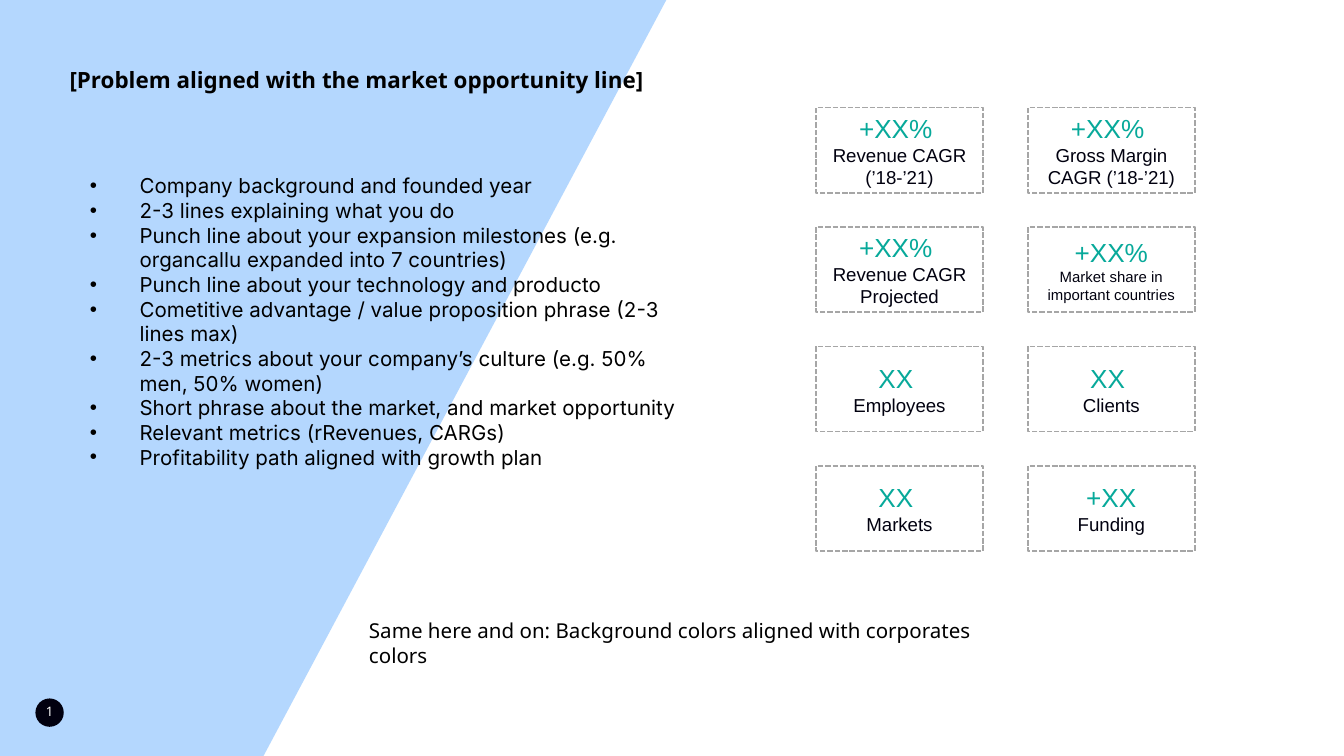
import pptx
import pptx.dml.color
import pptx.enum.dml
import pptx.enum.shapes
import pptx.enum.text
import pptx.oxml.ns
import pptx.util
from lxml import etree

Pt = pptx.util.Pt
ALIGN = pptx.enum.text.PP_ALIGN
ANCHOR = pptx.enum.text.MSO_ANCHOR
SHAPE = pptx.enum.shapes.MSO_SHAPE

COLORS = {
    "sky": "B4D7FE",
    "ink": "01000F",
    "black": "000000",
    "white": "FFFFFF",
    "teal": "07A99A",
    "dash": "A6A6A6",
}


class SlideBuilder:
    def __init__(self, slide):
        self.slide = slide

    def color(self, name):
        return pptx.dml.color.RGBColor.from_string(COLORS[name])

    def paint(self, shape, fill):
        shape.shadow.inherit = False
        shape.fill.solid()
        shape.fill.fore_color.rgb = self.color(fill)
        shape.line.fill.background()

    def add_words(self, paragraph, text, size, font, color, bold=False):
        run = paragraph.add_run()
        run.text = text
        run.font.size = Pt(size)
        run.font.name = font
        run.font.bold = bold
        run.font.color.rgb = self.color(color)

    def outline(self, points, fill):
        corners = [(Pt(x), Pt(y)) for x, y in points]
        pen = self.slide.shapes.build_freeform(*corners[0])
        pen.add_line_segments(corners[1:], close=True)
        self.paint(pen.convert_to_shape(), fill)

    def shape(self, kind, x, y, w, h, fill):
        shape = self.slide.shapes.add_shape(kind, Pt(x), Pt(y), Pt(w), Pt(h))
        self.paint(shape, fill)
        return shape

    def text(self, x, y, w, h, lines, size, font, color="black", bold=False,
             pad=3.6, anchor=ANCHOR.TOP, align=ALIGN.LEFT, bullets=False):
        frame = self.slide.shapes.add_textbox(Pt(x), Pt(y), Pt(w), Pt(h)).text_frame
        frame.word_wrap = True
        frame.vertical_anchor = anchor
        frame.margin_top = frame.margin_bottom = Pt(pad)
        for i, line in enumerate(lines):
            paragraph = frame.add_paragraph() if i else frame.paragraphs[0]
            paragraph.alignment = align
            if bullets:
                self.bullet(paragraph)
            self.add_words(paragraph, line, size, font, color, bold)
        return frame

    def bullet(self, paragraph):
        properties = paragraph._p.get_or_add_pPr()
        properties.set("marL", str(Pt(36)))
        properties.set("indent", str(-Pt(26.6)))
        qn = pptx.oxml.ns.qn
        tint = etree.SubElement(properties, qn("a:buClr"))
        etree.SubElement(tint, qn("a:srgbClr")).set("val", COLORS["black"])
        etree.SubElement(properties, qn("a:buFont")).set("typeface", "Arial")
        etree.SubElement(properties, qn("a:buChar")).set("char", "•")

    def metric(self, x, y, w, h, value, label, label_size):
        card = self.shape(SHAPE.RECTANGLE, x, y, w, h, "white")
        card.line.color.rgb = self.color("dash")
        card.line.width = Pt(1)
        card.line.dash_style = pptx.enum.dml.MSO_LINE.SQUARE_DOT
        frame = card.text_frame
        frame.word_wrap = True
        frame.vertical_anchor = ANCHOR.MIDDLE
        value_line, label_line = frame.paragraphs[0], frame.add_paragraph()
        value_line.alignment = label_line.alignment = ALIGN.CENTER
        self.add_words(value_line, value, 14, "Arial", "teal")
        self.add_words(label_line, label, label_size, "Arial", "ink")


def main():
    deck = pptx.Presentation()
    deck.slide_width, deck.slide_height = Pt(720), Pt(405)
    builder = SlideBuilder(deck.slides.add_slide(deck.slide_layouts[6]))

    # Slanted background
    builder.outline([(0, 0), (357, 0), (141.2, 405), (0, 405)], "sky")

    # Page number
    builder.shape(SHAPE.OVAL, 19, 374.2, 15.2, 15.2, "ink")
    page_number = builder.text(13.3, 374.2, 26.6, 15.2, ["1"], 7, "Noto Sans", "white",
                               pad=7.2, anchor=ANCHOR.MIDDLE, align=ALIGN.CENTER)
    page_number.paragraphs[0].line_spacing = 0.8

    # Company points
    company_points = [
        "Company background and founded year",
        "2-3 lines explaining what you do",
        "Punch line about your expansion milestones (e.g. organcallu expanded into 7 countries)",
        "Punch line about your technology and producto",
        "Cometitive advantage / value proposition phrase (2-3 lines max)",
        "2-3 metrics about your company’s culture (e.g. 50% men, 50% women)",
        "Short phrase about the market, and market opportunity",
        "Relevant metrics (rRevenues, CARGs)",
        "Profitability path aligned with growth plan",
    ]
    builder.text(31.7, 85.7, 347, 212.4, company_points, 11, "Inter",
                 pad=7.2, bullets=True)

    # Metric cards, two per row
    metrics = [
        ("+XX% ", "Revenue CAGR (’18-’21)", 10),
        ("+XX% ", "Gross Margin CAGR (’18-’21)", 10),
        ("+XX% ", "Revenue CAGR Projected", 10),
        ("+XX%", "Market share in important countries", 8),
        ("XX ", "Employees", 10),
        ("XX ", "Clients", 10),
        ("XX ", "Markets", 10),
        ("+XX", "Funding", 10),
    ]
    for i, (value, label, label_size) in enumerate(metrics):
        row, column = divmod(i, 2)
        builder.metric(437.2 + 113.5 * column, 57.6 + 64 * row, 89.4, 45.6,
                       value, label, label_size)

    # Colour note and title
    builder.text(190.6, 327.6, 360, 33.8,
                 ["Same here and on: Background colors aligned with corporates colors"],
                 11, "Noto Sans")
    builder.text(30.2, 31.7, 348.5, 21.6,
                 ["[Problem aligned with the market opportunity line]"],
                 12, "Noto Sans", bold=True)

    deck.save("out.pptx")


if __name__ == "__main__":
    main()
